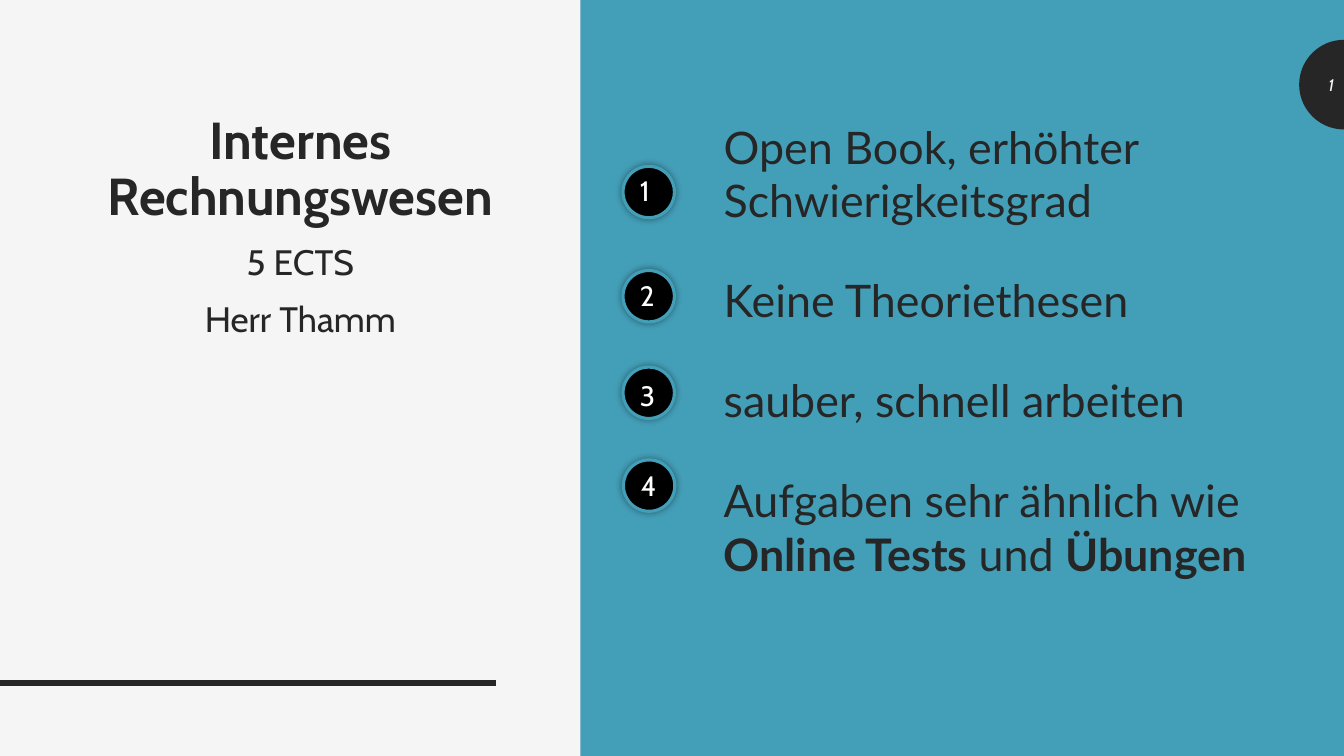
import math
from dataclasses import dataclass

import pptx
import pptx.dml.color
import pptx.enum.shapes
import pptx.enum.text
import pptx.oxml
import pptx.oxml.ns
import pptx.util

Pt = pptx.util.Pt
ALIGN = pptx.enum.text.PP_ALIGN
ANCHOR = pptx.enum.text.MSO_ANCHOR
SHAPE = pptx.enum.shapes.MSO_SHAPE


@dataclass(frozen=True)
class Theme:
    paper: str = "F5F5F5"
    panel: str = "439EB7"
    ink: str = "262626"
    badge: str = "000000"
    badge_text: str = "FFFFFF"
    head_font: str = "Cabin"
    body_font: str = "Lato"
    title: float = 37.1
    subtitle: float = 25.2
    body: float = 32
    number: float = 20
    page: float = 12


T = Theme()

POINTS = [
    [("Open Book, erhöhter Schwierigkeitsgrad", False)],
    [("Keine Theoriethesen", False)],
    [("sauber, schnell arbeiten", False)],
    [("Aufgaben sehr ähnlich wie ", False), ("Online Tests ", True),
     ("und ", False), ("Übungen", True)],
]
# Badge: circle left, circle top, number left, number top
BADGES = [(445, 118.8, 450, 120.2), (445, 193.2, 450, 195.1),
          (445, 262.2, 450, 267.1), (445.3, 328.5, 450.7, 331.2)]


def rgb(value):
    return pptx.dml.color.RGBColor.from_string(value)


def paint(sp, fill):
    sp.shadow.inherit = False
    sp.fill.solid()
    sp.fill.fore_color.rgb = rgb(fill)
    sp.line.fill.background()


def text_box(s, x, y, w, h, anchor=ANCHOR.TOP):
    tf = s.shapes.add_textbox(Pt(x), Pt(y), Pt(w), Pt(h)).text_frame
    tf.word_wrap = True
    tf.vertical_anchor = anchor
    return tf


def style(p, size, font, color, align=ALIGN.LEFT):
    p.alignment = align
    p.font.size = Pt(size)
    p.font.name = font
    p.font.color.rgb = rgb(color)


def add_panel(s):
    sp = s.shapes.add_shape(SHAPE.RECTANGLE, Pt(414.5), 0, Pt(545.5), Pt(540))
    paint(sp, T.panel)


def add_rule(s):
    line = s.shapes.add_connector(pptx.enum.shapes.MSO_CONNECTOR.STRAIGHT,
                                  0, Pt(488), Pt(354), Pt(488))
    line.line.color.rgb = rgb(T.ink)
    line.line.width = Pt(4.5)
    line._element.spPr.append(pptx.oxml.parse_xml(
        f'<a:effectLst {pptx.oxml.ns.nsdecls("a")}/>'))


def add_page_tab(s):
    cx, cy, radius, steps = 960, 60.5, 32, 48
    angles = [math.pi * (0.5 + i / steps) for i in range(steps + 1)]
    arc = [(Pt(cx + radius * math.cos(a)), Pt(cy + radius * math.sin(a)))
           for a in angles]
    builder = s.shapes.build_freeform(*arc[0])
    builder.add_line_segments(arc[1:], close=True)
    paint(builder.convert_to_shape(), T.ink)

    p = text_box(s, 927.5, 46, 32.5, 29, ANCHOR.MIDDLE).paragraphs[0]
    p.text = "1"
    style(p, T.page, T.head_font, T.paper, ALIGN.RIGHT)
    p.font.italic = True


def add_title(s):
    tf = text_box(s, 13, 78.5, 403, 309)
    rows = [("Internes", T.title, 0), ("Rechnungswesen", T.title, 0),
            ("5 ECTS", T.subtitle, 13), ("Herr Thamm", T.subtitle, 13)]
    for i, (text, size, gap) in enumerate(rows):
        p = tf.add_paragraph() if i else tf.paragraphs[0]
        p.text = text
        style(p, size, T.head_font, T.ink, ALIGN.CENTER)
        p.font.bold = size == T.title
        p.line_spacing = 0.9
        p.space_before = Pt(gap)


def add_points(s):
    tf = text_box(s, 509.8, -20, 416, 540, ANCHOR.MIDDLE)
    for i, runs in enumerate(POINTS):
        p = tf.add_paragraph() if i else tf.paragraphs[0]
        style(p, T.body, T.body_font, T.ink)
        p.space_before = Pt(9)
        p.space_after = Pt(24)
        for text, bold in runs:
            r = p.add_run()
            r.text = text
            r.font.bold = bold


def add_badge(s, number, x, y, text_x, text_y):
    sp = s.shapes.add_shape(SHAPE.OVAL, Pt(x), Pt(y), Pt(36.7), Pt(36.7))
    paint(sp, T.badge)
    sp.line.color.rgb = rgb(T.panel)
    sp.line.width = Pt(2.25)
    # Soft glow-like shadow: 5 pt blur, no offset, 40 % opaque
    effects = sp._element.spPr.find(pptx.oxml.ns.qn("a:effectLst"))
    effects.append(pptx.oxml.parse_xml(
        f'<a:outerShdw {pptx.oxml.ns.nsdecls("a")} blurRad="{Pt(5)}" dist="0">'
        f'<a:srgbClr val="{T.badge}"><a:alpha val="40000"/></a:srgbClr>'
        '</a:outerShdw>'))

    p = text_box(s, text_x, text_y, 26, 31).paragraphs[0]
    p.text = str(number)
    style(p, T.number, T.head_font, T.badge_text)


def main():
    prs = pptx.Presentation()
    prs.slide_width, prs.slide_height = Pt(960), Pt(540)
    s = prs.slides.add_slide(prs.slide_layouts[6])
    s.background.fill.solid()
    s.background.fill.fore_color.rgb = rgb(T.paper)

    # Backdrop
    add_rule(s)
    add_panel(s)
    add_page_tab(s)

    # Content
    add_title(s)
    add_points(s)
    for number, place in enumerate(BADGES, 1):
        add_badge(s, number, *place)

    prs.save("out.pptx")


if __name__ == "__main__":
    main()
